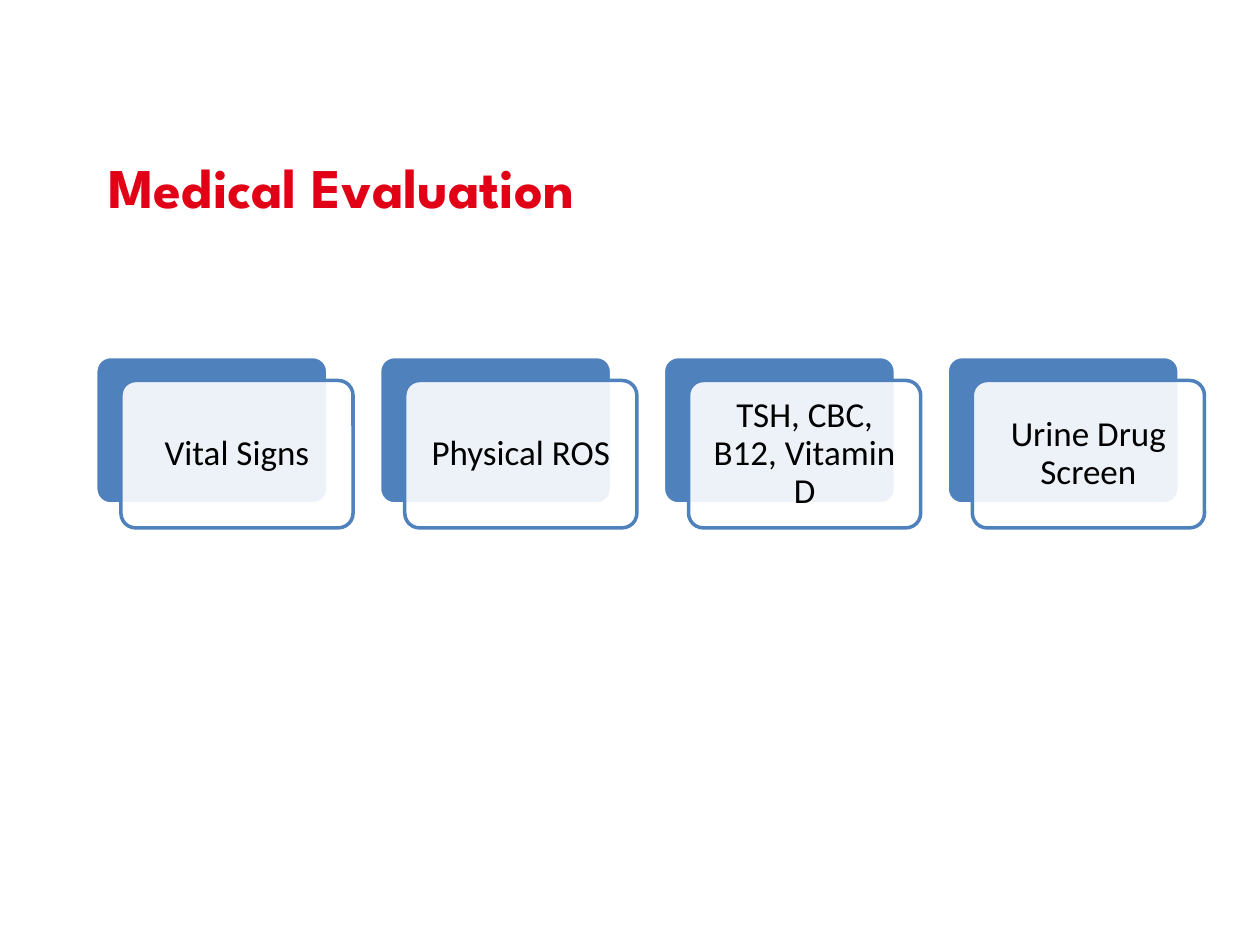
from lxml import etree
from pptx import Presentation
from pptx import util as u
from pptx.dml.color import RGBColor
from pptx.enum import shapes, text
from pptx.oxml.ns import qn

RED, BLUE, WHITE, BLACK = "E10016", "4F81BD", "FFFFFF", "000000"
TESTS = ["Vital Signs", "Physical ROS", "TSH, CBC, B12, Vitamin D", "Urine Drug Screen"]


def color(value):
    return RGBColor.from_string(value)


def apply(target, values):
    for name, value in values.items():
        setattr(target, name, value)


def write(shape, words, font_color, inset, frame_format, paragraph_format, font_format):
    frame = shape.text_frame
    apply(frame, {"word_wrap": True, **frame_format})
    apply(frame, {f"margin_{side}": u.Inches(inset) for side in ("left", "top", "right", "bottom")})
    paragraph = frame.paragraphs[0]
    apply(paragraph, paragraph_format)
    run = paragraph.add_run()
    run.text = words
    apply(run.font, font_format)
    run.font.color.rgb = color(font_color)


def add_title(slide, left, top, width, height, words):
    box = slide.shapes.add_textbox(*map(u.Inches, (left, top, width, height)))
    write(box, words, RED, 0.1,
          {"vertical_anchor": text.MSO_ANCHOR.MIDDLE},
          {"alignment": text.PP_ALIGN.LEFT},
          {"name": "League Spartan", "size": u.Pt(32), "bold": True})


def add_panel(slide, left, top, width, height, fill, line, opacity=100):
    panel = slide.shapes.add_shape(shapes.MSO_SHAPE.ROUNDED_RECTANGLE,
                                   *map(u.Inches, (left, top, width, height)))
    panel.adjustments[0] = 0.1
    panel.shadow.inherit = False
    panel.fill.solid()
    panel.fill.fore_color.rgb = color(fill)
    panel.line.color.rgb = color(line)
    panel.line.width = u.Pt(2)
    if opacity < 100:
        fill_color = panel.fill._xPr.find(qn("a:solidFill"))[0]
        etree.SubElement(fill_color, qn("a:alpha"), val=str(opacity * 1000))
    return panel


def add_test_card(slide, left, top, width, height, words):
    shift_x, shift_y = 0.2, 0.19
    panel_size = width - shift_x, height - shift_y
    add_panel(slide, left, top, *panel_size, BLUE, WHITE)
    front = add_panel(slide, left + shift_x, top + shift_y, *panel_size, WHITE, BLUE, 90)
    write(front, words, BLACK, 0.08,
          {"vertical_anchor": text.MSO_ANCHOR.MIDDLE},
          {"alignment": text.PP_ALIGN.CENTER, "line_spacing": 0.9},
          {"name": "Calibri", "size": u.Pt(20)})


def add_test_row(slide, left, top, width, height, tests):
    gap = 0.21
    card_width = (width - gap * (len(tests) - 1)) / len(tests)
    for index, words in enumerate(tests):
        add_test_card(slide, left + index * (card_width + gap), top, card_width, height, words)


def main():
    presentation = Presentation()
    apply(presentation, {"slide_width": u.Inches(10), "slide_height": u.Inches(7.5)})
    slide = presentation.slides.add_slide(presentation.slide_layouts[6])
    add_title(slide, 0.76, 1.21, 11.84, 0.54, "Medical Evaluation")
    add_test_row(slide, 0.76, 2.83, 8.8, 1.36, TESTS)
    presentation.save("out.pptx")


if __name__ == "__main__":
    main()
